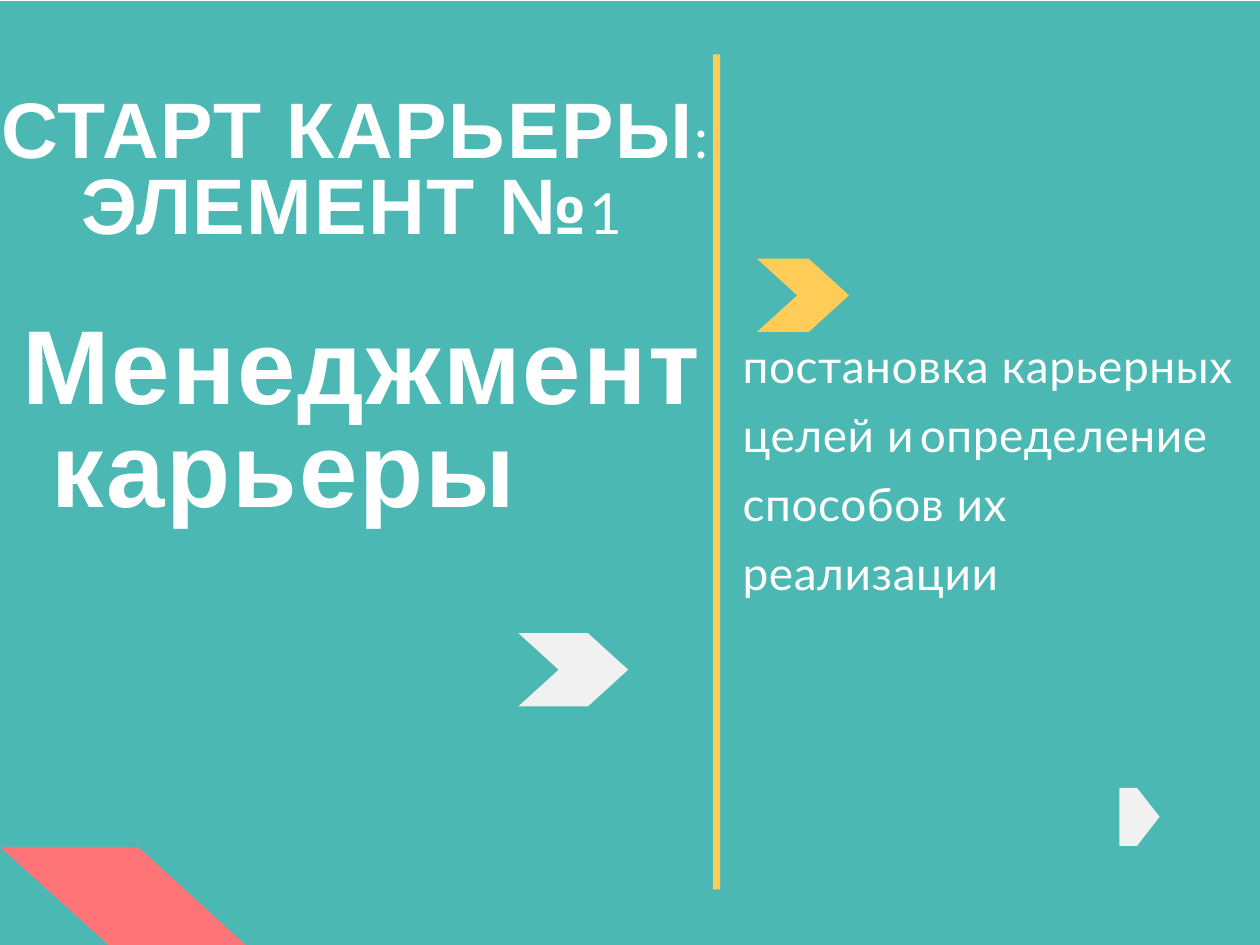
"""Build the career management slide."""
from lxml import etree
from pptx import Presentation
from pptx import util as u
from pptx.dml.color import RGBColor
from pptx.enum import shapes, text
from pptx.oxml import ns

TEAL, YELLOW, CORAL = "4BB8B4", "FFCC57", "FF7477"
GREY, WHITE = "F1F1F1", "FFFFFF"
BOLD, BIG = ("Arial", 48, True), ("Arial", 64, True)


def rgb(value):
    return RGBColor.from_string(value)


class Painter:
    """Hold the style and the current slide."""

    def __init__(self, page, color=WHITE):
        self.page = page
        self.color = color

    def paint(self, shape, color):
        shape.shadow.inherit = False
        shape.fill.solid()
        shape.fill.fore_color.rgb = rgb(color)
        shape.line.fill.background()

    def preset(self, kind, place, color, point=None):
        shape = self.page.shapes.add_shape(kind, *map(u.Inches, place))
        if point is not None:
            shape.adjustments[0] = point
        self.paint(shape, color)

    def outline(self, points, color):
        first, *rest = [(u.Inches(x), u.Inches(y)) for x, y in points]
        builder = self.page.shapes.build_freeform(*first)
        builder.add_line_segments(rest, close=True)
        self.paint(builder.convert_to_shape(), color)

    def title(self, place, spans, **layout):
        box = self.page.shapes.title
        box.left, box.top, box.width, box.height = map(u.Inches, place)
        box.element.getparent().append(box.element)
        self.fill_text(box.text_frame, spans, **layout)

    def textbox(self, place, spans, **layout):
        box = self.page.shapes.add_textbox(*map(u.Inches, place))
        self.fill_text(box.text_frame, spans, **layout)

    def fill_text(self, frame, spans, inset, leading, before, spacing,
                  left=0.01, hang=0, tab=None):
        frame.word_wrap = True
        frame.auto_size = text.MSO_AUTO_SIZE.NONE
        frame.vertical_anchor = text.MSO_ANCHOR.TOP
        frame.margin_left = frame.margin_right = frame.margin_bottom = 0
        frame.margin_top = u.Inches(inset)
        para = frame.paragraphs[0]
        para.alignment = text.PP_ALIGN.LEFT
        para.line_spacing = leading
        para.space_before = u.Pt(before)
        props = para._p.get_or_add_pPr()
        props.set("marL", str(u.Inches(left)))
        props.set("indent", str(-u.Inches(hang)))
        if tab:
            tabs = etree.SubElement(props, ns.qn("a:tabLst"))
            etree.SubElement(tabs, ns.qn("a:tab"), pos=str(u.Inches(tab)), algn="l")
        for words, (name, size, bold) in spans:
            span = para.add_run()
            span.text = words
            span._r.get_or_add_rPr().set("spc", str(round(spacing * 100)))
            font = para.font if len(spans) == 1 else span.font
            font.name, font.size, font.bold = name, u.Pt(size), bold
            font.color.rgb = rgb(self.color)


def main():
    deck = Presentation()
    deck.slide_width, deck.slide_height = u.Inches(10.67), u.Inches(8)
    painter = Painter(deck.slides.add_slide(deck.slide_layouts[5]))
    kinds = shapes.MSO_SHAPE

    painter.preset(kinds.RECTANGLE, (0, 0.01, 10.67, 7.99), TEAL)
    painter.textbox((0.18, 2.52, 5.81, 1.97), [("Менеджмент карьеры", BIG)],
                    inset=0.22, leading=u.Pt(62.3), before=15.6, spacing=1.3,
                    left=0.26, hang=0.25)
    painter.preset(kinds.RECTANGLE, (6.04, 0.46, 0.06, 7.07), YELLOW)
    goals = "постановка карьерных целей и\tопределение способов их реализации"
    painter.textbox((6.28, 2.73, 4.27, 2.36), [(goals, ("Lato", 28, False))],
                    inset=0.01, leading=1.25, before=0.9, spacing=0.4, tab=1.73)
    painter.preset(kinds.CHEVRON, (6.41, 2.19, 0.78, 0.62), YELLOW, 0.55)
    painter.preset(kinds.CHEVRON, (4.39, 5.36, 0.93, 0.62), GREY, 0.55)
    painter.outline([(0, 7.17), (1.17, 7.17), (2.08, 8), (0.92, 8)], CORAL)
    painter.preset(kinds.PENTAGON, (9.48, 6.67, 0.34, 0.49), GREY, 0.56)
    painter.title((0, 0, 7.07, 5.28),
                  [("СТАРТ КАРЬЕРЫ", BOLD), (": ", ("Lato", 34, False)),
                   ("ЭЛЕМЕНТ №", BOLD), ("1", ("Lato", 34.5, False))],
                  inset=0.83, leading=u.Pt(46.5), before=12.1, spacing=1,
                  left=0.69, hang=0.68)
    deck.save("out.pptx")


if __name__ == "__main__":
    main()
